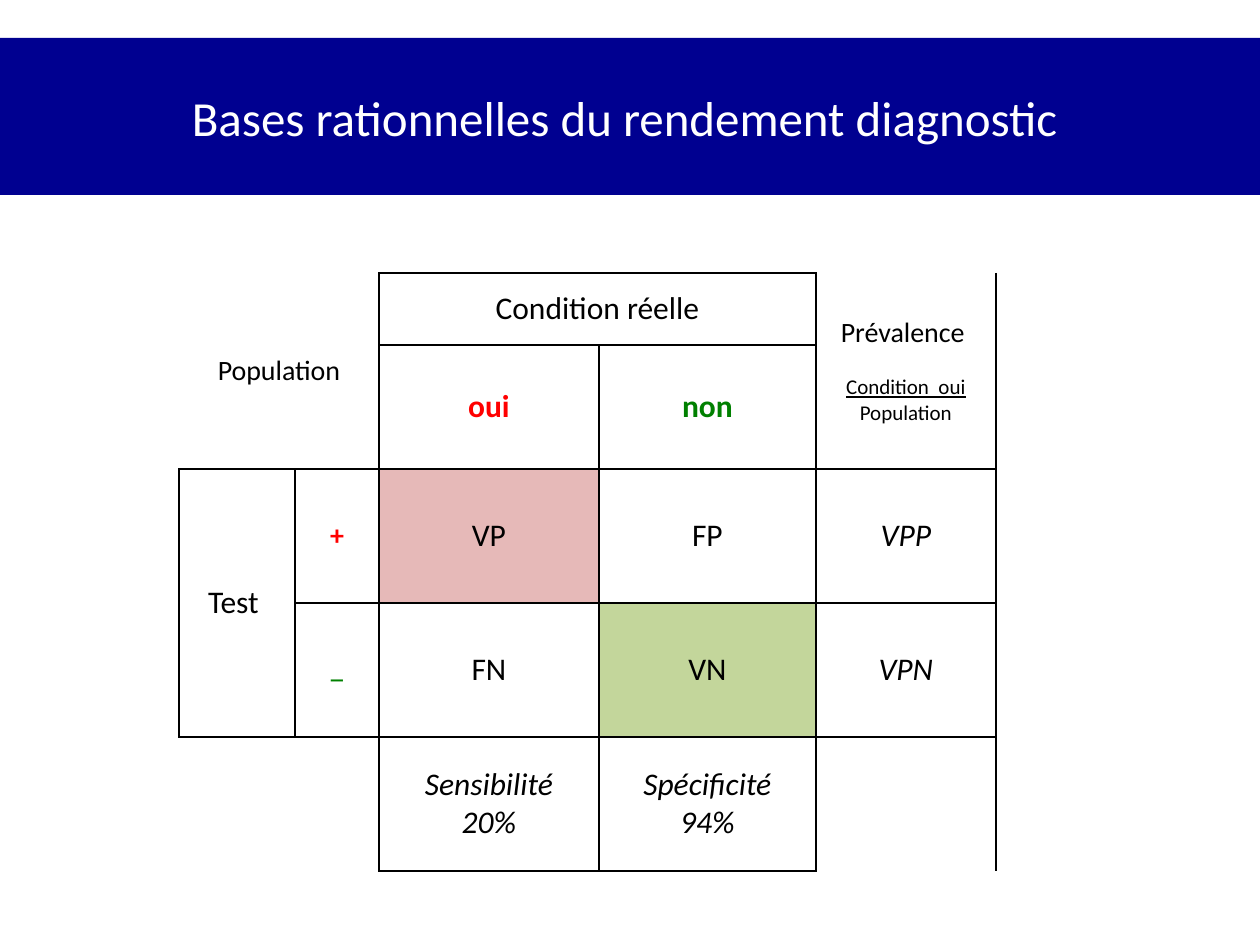
import pptx
import pptx.util
import pptx.dml.color
import pptx.enum.text
import pptx.oxml
import pptx.oxml.ns

RGB = pptx.dml.color.RGBColor
BLACK = RGB(0, 0, 0)
WHITE = RGB(255, 255, 255)
NAVY = RGB(0, 0, 0x90)
RED = RGB(255, 0, 0)
GREEN = RGB(0, 0x80, 0)
PINK = RGB(0xE6, 0xB9, 0xB8)
LIME = RGB(0xC3, 0xD6, 0x9B)
PLAIN = "{2D5ABB26-0587-4C30-8999-92F81FD0307C}"
SIDES = {"L": (0, -1), "R": (0, 1), "T": (-1, 0), "B": (1, 0)}


def px(num):
    return pptx.util.Emu(round(num * 914400 / 126))


def write(par, words, size=18, ink=BLACK, bold=False, ital=False, under=False):
    par.alignment = pptx.enum.text.PP_ALIGN.CENTER
    run = par.add_run()
    run.text = words
    font = run.font
    font.name = "Calibri"
    font.size = pptx.util.Pt(size)
    font.bold, font.italic, font.underline = bold, ital, under
    font.color.rgb = ink


class Deck:
    """Holds the style and the current slide."""

    def __init__(self, wide, high):
        self.file = pptx.Presentation()
        self.file.slide_width, self.file.slide_height = px(wide), px(high)
        self.slide = self.file.slides.add_slide(self.file.slide_layouts[5])

    def title(self, words, box):
        bar = self.slide.shapes.title
        bar.left, bar.top, bar.width, bar.height = map(px, box)
        bar.fill.solid()
        bar.fill.fore_color.rgb = NAVY
        bar.text_frame.vertical_anchor = pptx.enum.text.MSO_ANCHOR.MIDDLE
        write(bar.text_frame.paragraphs[0], words, size=28, ink=WHITE)

    def grid(self, left, top, cols, rows, spans, blank):
        frame = self.slide.shapes.add_table(
            len(rows), len(cols), px(left), px(top), px(sum(cols)), px(sum(rows)))
        self.table = frame.table
        self.table.first_row = self.table.horz_banding = False
        props = self.table._tbl.tblPr
        props.find(pptx.oxml.ns.qn("a:tableStyleId")).text = PLAIN
        for col, wide in zip(self.table.columns, cols):
            col.width = px(wide)
        for row, high in zip(self.table.rows, rows):
            row.height = px(high)
        for start, end in spans:
            self.table.cell(*start).merge(self.table.cell(*end))
        drawn = {(r, c) for r in range(len(rows)) for c in range(len(cols))} - blank
        for r in range(len(rows)):
            for c in range(len(cols)):
                cell = self.table.cell(r, c)
                for side, (down, right) in SIDES.items():
                    if {(r, c), (r + down, c + right)} & drawn:
                        self.edge(cell, side)
                cell.fill.background()

    def edge(self, cell, side):
        cell._tc.get_or_add_tcPr().append(pptx.oxml.parse_xml(
            f'<a:ln{side} {pptx.oxml.ns.nsdecls("a")} w="12700"><a:solidFill>'
            f'<a:srgbClr val="{BLACK}"/></a:solidFill></a:ln{side}>'))

    def cell(self, row, col, *lines, fill=None, gap=0, **style):
        cell = self.table.cell(row, col)
        cell.vertical_anchor = pptx.enum.text.MSO_ANCHOR.MIDDLE
        if fill is not None:
            cell.fill.solid()
            cell.fill.fore_color.rgb = fill
        body = cell.text_frame
        for num, words in enumerate(lines):
            par = body.add_paragraph() if num else body.paragraphs[0]
            write(par, words, **style)
        return body


def main():
    deck = Deck(1260, 945)
    deck.title("Bases rationnelles du rendement diagnostic ", (0, 38, 1260, 157))
    blank = {(r, c) for r in (0, 1, 4) for c in (0, 1, 4)}
    spans = [((0, 0), (1, 1)), ((0, 2), (0, 3)), ((0, 4), (1, 4)),
             ((2, 0), (3, 0)), ((4, 0), (4, 1))]
    deck.grid(179, 273, (116, 84, 220, 217, 180), (72, 124, 134, 134, 134),
              spans, blank)
    deck.cell(0, 0, "Population", size=16)
    deck.cell(0, 2, "Condition réelle")
    ratio = deck.cell(0, 4, "Prévalence ", size=16).add_paragraph()
    ratio.space_before = pptx.util.Pt(14)
    write(ratio, "Condition  oui ", size=12, under=True)
    write(ratio, "Population", size=12)
    deck.cell(1, 2, "oui", ink=RED, bold=True)
    deck.cell(1, 3, "non", ink=GREEN, bold=True)
    deck.cell(2, 0, "Test ")
    deck.cell(2, 1, "+", size=16, ink=RED, bold=True)
    deck.cell(3, 1, "_", size=14, ink=GREEN, bold=True)
    deck.cell(2, 2, "VP", fill=PINK)
    deck.cell(2, 3, "FP")
    deck.cell(3, 2, "FN")
    deck.cell(3, 3, "VN", fill=LIME)
    deck.cell(2, 4, "VPP", ital=True)
    deck.cell(3, 4, "VPN", ital=True)
    deck.cell(4, 2, "Sensibilité", "20%", ital=True)
    deck.cell(4, 3, "Spécificité", "94%", ital=True)
    deck.file.save("out.pptx")


if __name__ == "__main__":
    main()
